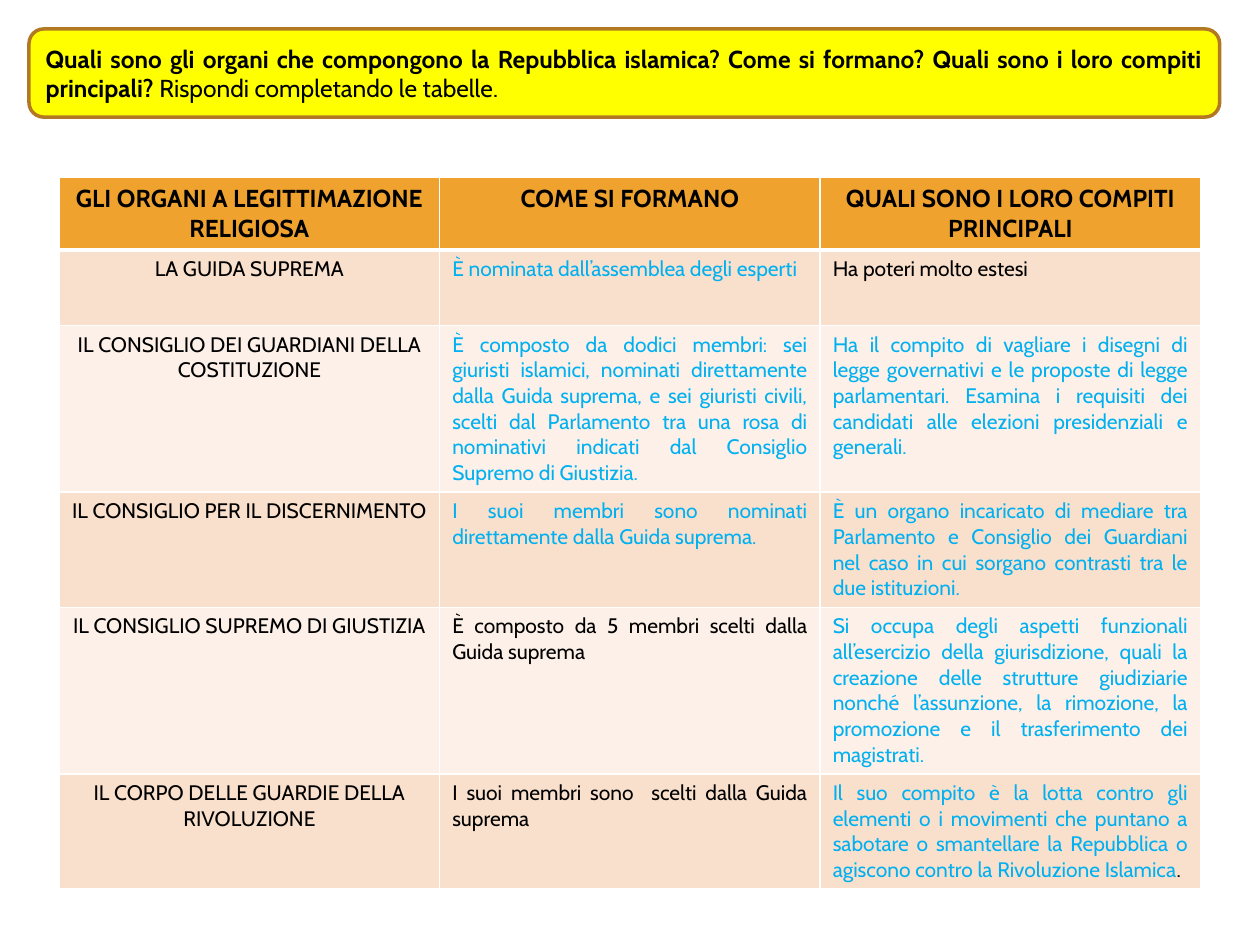
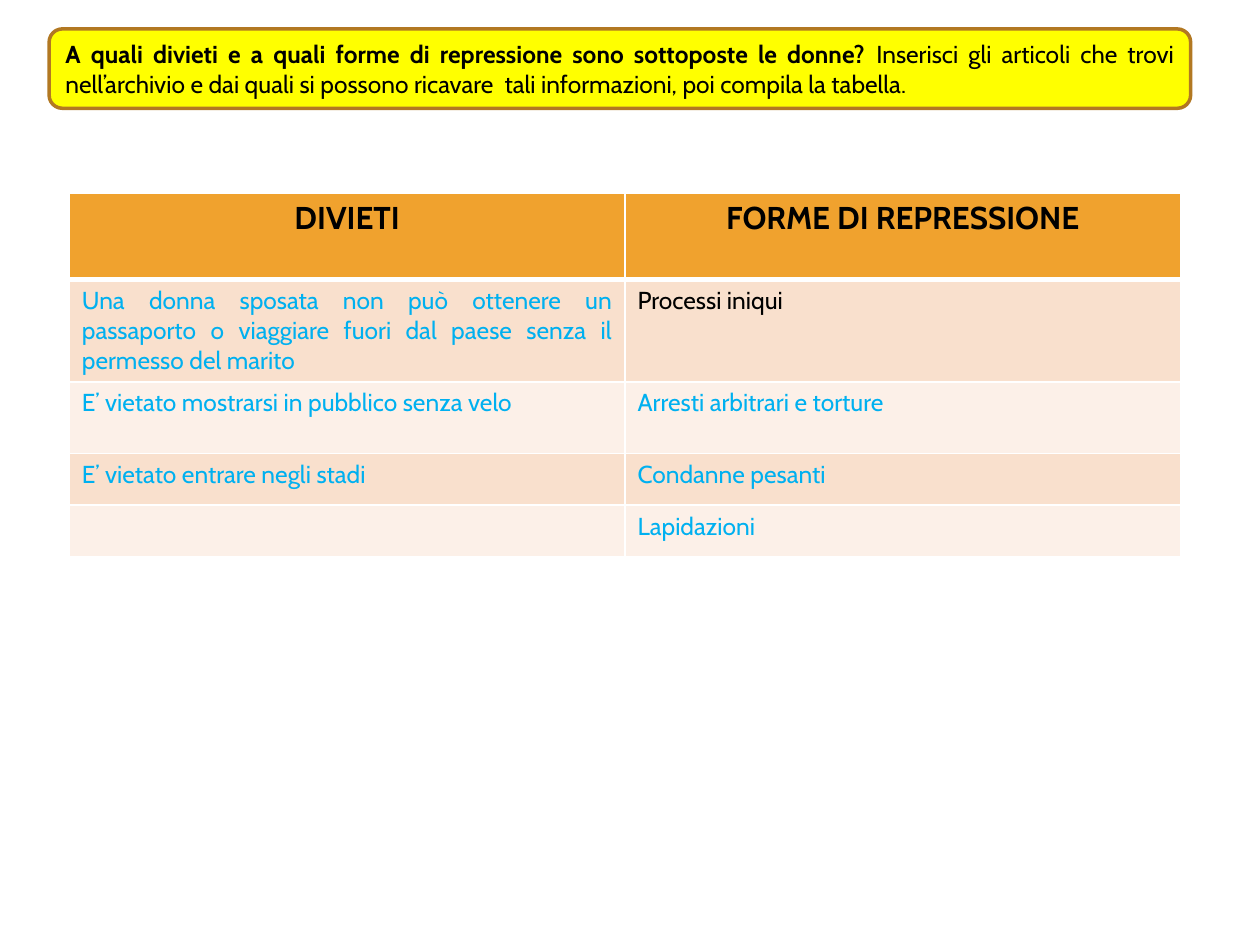
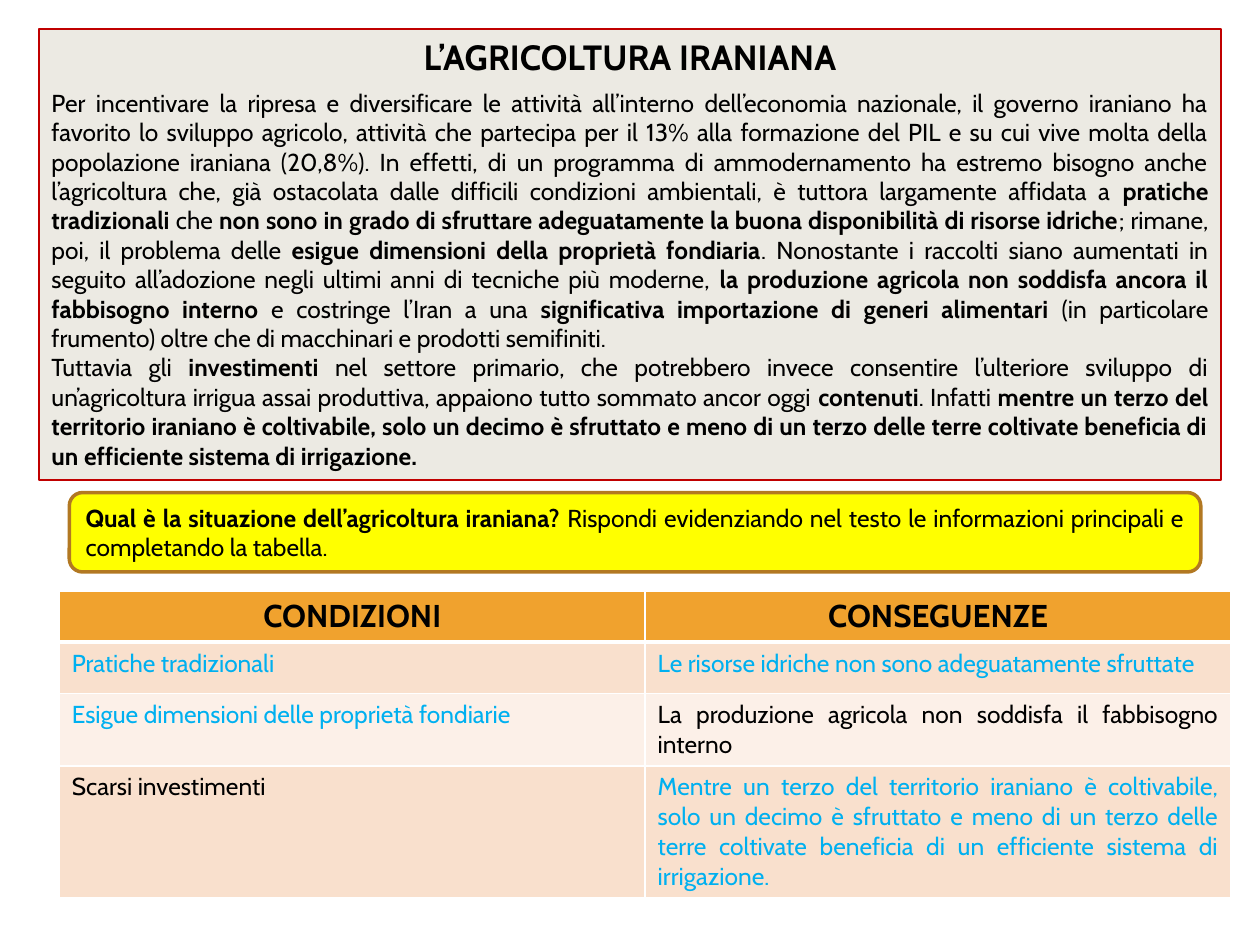
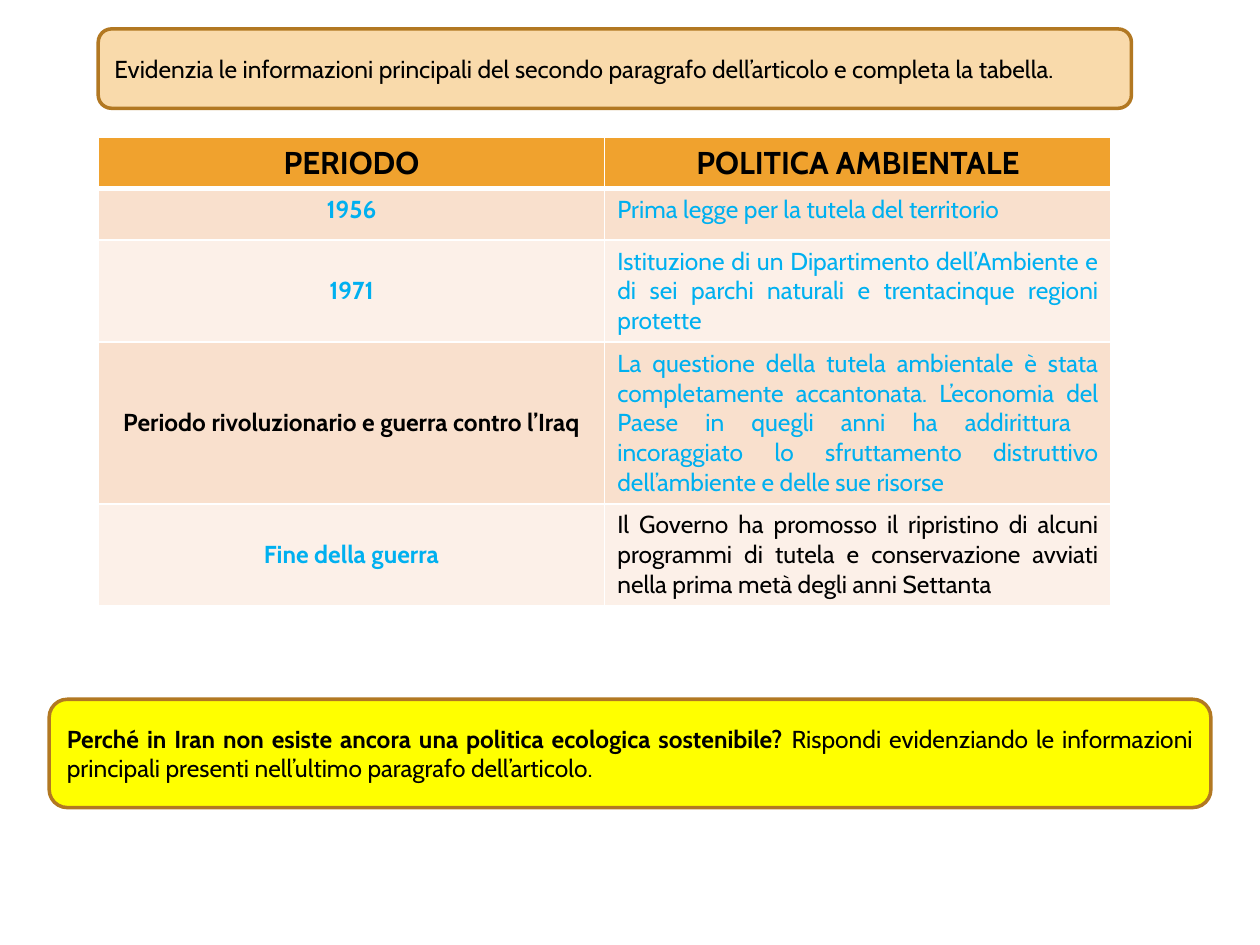
"""Build four worksheet slides on Iran: institutions, women's rights, agriculture and environment."""
from lxml.etree import SubElement
from pptx import Presentation
from pptx.dml.color import RGBColor
from pptx.enum.shapes import MSO_SHAPE as Shape
from pptx.enum.text import MSO_ANCHOR as Anchor, PP_ALIGN as Align
from pptx.oxml.ns import qn
from pptx.util import Inches, Pt

FONT = "Cabin"
COLOURS = {
    "text": "000000", "answer": "00B0F0", "border": "FFFFFF",
    "header": "F0A22E", "odd": "F9E0CD", "even": "FCF0E8",
    "question": "FFFF00", "instruction": "F9DAAB", "outline": "B27822",
    "reading": "ECEAE3", "reading_outline": "C00000",
}


def write(paragraph, text, size, align=Align.JUSTIFY, colour="text", bold=False):
    """Write text where *stars* switch bold and whatever follows a bar is black."""
    paragraph.alignment = align
    for part, passage in enumerate(text.split("|")):
        for index, words in enumerate(passage.split("*")):
            if words:
                run = paragraph.add_run()
                run.text = words
                look = {"name": FONT, "size": Pt(size), "bold": bold or index % 2 == 1}
                for attribute, value in look.items():
                    setattr(run.font, attribute, value)
                run.font.color.rgb = RGBColor.from_string(COLOURS["text" if part else colour])


def add_panel(slide, kind, place, fill, outline, width):
    """Add a filled, outlined panel and return its text frame."""
    panel = slide.shapes.add_shape(kind, *map(Inches, place))
    panel.shadow.inherit = False
    panel.fill.solid()
    panel.fill.fore_color.rgb = RGBColor.from_string(COLOURS[fill])
    panel.line.color.rgb = RGBColor.from_string(COLOURS[outline])
    panel.line.width = Pt(width)
    panel.text_frame.word_wrap = True
    return panel.text_frame


prompts = [
    (0, (0.23, 0.23, 9.45, 0.7), "question",
     "*Quali sono gli organi che compongono la Repubblica islamica? Come si formano? "
     "Quali sono i loro compiti principali? *Rispondi completando le tabelle."),
    (1, (0.39, 0.23, 9.06, 0.63), "question",
     "*A quali divieti e a quali forme di repressione sono sottoposte le donne? *"
     "Inserisci gli articoli che trovi nell’archivio e dai quali si possono ricavare  tali "
     "informazioni, poi compila la tabella."),
    (2, (0.55, 3.91, 8.98, 0.63), "question",
     "*Qual è la situazione dell’agricoltura iraniana? *Rispondi evidenziando nel testo le "
     "informazioni principali e completando la tabella."),
    (3, (0.78, 0.23, 8.2, 0.63), "instruction",
     "Evidenzia le informazioni principali del secondo paragrafo dell’articolo e completa la tabella."),
    (3, (0.39, 5.55, 9.22, 0.86), "question",
     "*Perché in Iran non esiste ancora una politica ecologica sostenibile? *Rispondi "
     "evidenziando le informazioni principali presenti nell’ultimo paragrafo dell’articolo."),
]

reading_title = "L’AGRICOLTURA IRANIANA"
reading_paragraphs = [
    [
        "Per incentivare la ripresa e diversificare le attività all’interno dell’economia nazionale, "
        "il governo iraniano ha favorito lo sviluppo agricolo, attività che partecipa per il 13% alla "
        "formazione del PIL e su cui vive molta della popolazione iraniana (20,8%). ",
        "In effetti, di un programma di ammodernamento ha estremo bisogno anche l’agricoltura che, "
        "già ostacolata dalle difficili condizioni ambientali, è tuttora largamente affidata a "
        "*pratiche tradizionali *che *non sono in grado di sfruttare adeguatamente la buona "
        "disponibilità di risorse idriche*; rimane, poi, il problema delle *esigue dimensioni della "
        "proprietà fondiaria*. ",
        "Nonostante i raccolti siano aumentati in seguito all’adozione negli ultimi anni di tecniche "
        "più moderne, *la produzione agricola non soddisfa ancora il fabbisogno interno *e costringe "
        "l’Iran a una *significativa importazione di generi alimentari *(in particolare frumento) "
        "oltre che di macchinari e prodotti semifiniti.",
    ],
    [
        "Tuttavia gli *investimenti* nel settore primario, che potrebbero invece consentire "
        "l’ulteriore sviluppo di un’agricoltura irrigua assai produttiva, appaiono tutto sommato "
        "ancor oggi *contenuti*. ",
        "Infatti *mentre un terzo del territorio iraniano è coltivabile, solo un decimo è sfruttato "
        "e meno di un terzo delle terre coltivate beneficia di un efficiente sistema "
        "di irrigazione.*",
    ],
]

worksheets = [
    {
        "place": (0.47, 1.41, 9.06), "heights": (0.56, 0.6, 1.3, 0.9, 1.31, 0.9),
        "sizes": (14, 12), "centred_first": True, "bold_first": False,
        "given": {(1, 0), (2, 0), (3, 0), (4, 0), (5, 0), (1, 2), (4, 1), (5, 1)},
        "rows": [
            ("GLI ORGANI A LEGITTIMAZIONE RELIGIOSA", "COME SI FORMANO",
             "QUALI SONO I LORO COMPITI PRINCIPALI"),
            ("LA GUIDA SUPREMA", "È nominata dall’assemblea degli esperti", "Ha poteri molto estesi"),
            ("IL CONSIGLIO DEI GUARDIANI DELLA COSTITUZIONE",
             "È composto da dodici membri: sei giuristi islamici, nominati direttamente dalla Guida "
             "suprema, e sei giuristi civili, scelti dal Parlamento tra una rosa di nominativi "
             "indicati dal Consiglio Supremo di Giustizia.",
             "Ha il compito di vagliare i disegni di legge governativi e le proposte di legge "
             "parlamentari. Esamina i requisiti dei candidati alle elezioni presidenziali e generali."),
            ("IL CONSIGLIO PER IL DISCERNIMENTO",
             "I suoi membri sono nominati direttamente dalla Guida suprema.",
             "È un organo incaricato di mediare tra Parlamento e Consiglio dei Guardiani nel caso "
             "in cui sorgano contrasti tra le due istituzioni."),
            ("IL CONSIGLIO SUPREMO DI GIUSTIZIA",
             "È composto da 5 membri scelti dalla Guida suprema",
             "Si occupa degli aspetti funzionali all’esercizio della giurisdizione, quali la "
             "creazione delle strutture giudiziarie nonché l’assunzione, la rimozione, la "
             "promozione e il trasferimento dei magistrati."),
            ("IL CORPO DELLE GUARDIE DELLA RIVOLUZIONE",
             "I suoi membri sono  scelti dalla Guida suprema",
             "Il suo compito è la lotta contro gli elementi o i movimenti che puntano a sabotare o "
             "smantellare la Repubblica o agiscono contro la Rivoluzione Islamica|."),
        ],
    },
    {
        "place": (0.55, 1.53, 8.82), "heights": (0.69, 0.8, 0.57, 0.41, 0.41),
        "sizes": (18, 14), "centred_first": False, "bold_first": False,
        "given": {(1, 1)},
        "rows": [
            ("DIVIETI", "FORME DI REPRESSIONE"),
            ("Una donna sposata non può ottenere un passaporto o viaggiare fuori dal paese senza il "
             "permesso del marito", "Processi iniqui"),
            ("E’ vietato mostrarsi in pubblico senza velo", "Arresti arbitrari e torture"),
            ("E’ vietato entrare negli stadi", "Condanne pesanti"),
            ("", "Lapidazioni"),
        ],
    },
    {
        "place": (0.47, 4.69, 9.3), "heights": (0.4, 0.41, 0.57, 1.03),
        "sizes": (18, 14), "centred_first": False, "bold_first": False,
        "given": {(2, 1), (3, 0)},
        "rows": [
            ("CONDIZIONI", "CONSEGUENZE"),
            ("Pratiche tradizionali", "Le risorse idriche non sono adeguatamente sfruttate"),
            ("Esigue dimensioni delle proprietà fondiarie",
             "La produzione agricola non soddisfa il fabbisogno interno"),
            ("Scarsi investimenti",
             "Mentre un terzo del territorio iraniano è coltivabile, solo un decimo è sfruttato e "
             "meno di un terzo delle terre coltivate beneficia di un efficiente sistema "
             "di irrigazione."),
        ],
    },
    {
        "place": (0.78, 1.09, 8.04), "heights": (0.4, 0.41, 0.8, 1.27, 0.8),
        "sizes": (18, 14), "centred_first": True, "bold_first": True,
        "given": {(3, 0), (4, 1)},
        "rows": [
            ("PERIODO", "POLITICA AMBIENTALE"),
            ("1956", "Prima legge per la tutela del territorio"),
            ("1971",
             "Istituzione di un Dipartimento dell’Ambiente e di sei parchi naturali e trentacinque "
             "regioni protette"),
            ("Periodo rivoluzionario e guerra contro l’Iraq",
             "La questione della tutela ambientale è stata completamente accantonata. L’economia "
             "del Paese in quegli anni ha addirittura  incoraggiato lo sfruttamento distruttivo "
             "dell’ambiente e delle sue risorse"),
            ("Fine della guerra",
             "Il Governo ha promosso il ripristino di alcuni programmi di tutela e "
             "conservazione avviati nella prima metà degli anni Settanta"),
        ],
    },
]

deck = Presentation()
deck.slide_width, deck.slide_height = Inches(10), Inches(7.5)
slides = [deck.slides.add_slide(deck.slide_layouts[6]) for _ in worksheets]

reading = add_panel(slides[2], Shape.RECTANGLE, (0.31, 0.23, 9.38, 3.58),
                    "reading", "reading_outline", 1.5)
reading.vertical_anchor = Anchor.TOP
write(reading.paragraphs[0], reading_title, 20, Align.CENTER, bold=True)
reading.paragraphs[0].space_after = Pt(6)
for sentences in reading_paragraphs:
    passage = reading.add_paragraph()
    for sentence in sentences:
        write(passage, sentence, 14)

for number, place, fill, wording in prompts:
    prompt = add_panel(slides[number], Shape.ROUNDED_RECTANGLE, place, fill, "outline", 2)
    prompt.vertical_anchor = Anchor.MIDDLE
    write(prompt.paragraphs[0], wording, 14)

for slide, sheet in zip(slides, worksheets):
    left, top, width = sheet["place"]
    rows, heights = sheet["rows"], sheet["heights"]
    header_size, body_size = sheet["sizes"]
    grid = slide.shapes.add_table(len(rows), len(rows[0]), Inches(left), Inches(top),
                                  Inches(width), Inches(sum(heights))).table
    for grid_row, height in zip(grid.rows, heights):
        grid_row.height = Inches(height)
    for row, entries in enumerate(rows):
        for column, entry in enumerate(entries):
            cell = grid.cell(row, column)
            header = row == 0
            first = column == 0
            borders = {"a:lnL": 1, "a:lnR": 1, "a:lnT": 3 if row == 1 else 1, "a:lnB": 3 if header else 1}
            for side, points in borders.items():
                border = SubElement(cell._tc.get_or_add_tcPr(), qn(side), w=str(Pt(points)))
                SubElement(SubElement(border, qn("a:solidFill")), qn("a:srgbClr"), val=COLOURS["border"])
            band = "header" if header else "odd" if row % 2 else "even"
            cell.fill.solid()
            cell.fill.fore_color.rgb = RGBColor.from_string(COLOURS[band])
            centred = header or (first and sheet["centred_first"])
            if first and sheet["bold_first"] and row > 1:
                cell.vertical_anchor = Anchor.MIDDLE
            write(cell.text_frame.paragraphs[0], entry,
                  header_size if header else body_size,
                  Align.CENTER if centred else Align.JUSTIFY,
                  "text" if header or (row, column) in sheet["given"] else "answer",
                  header or (first and sheet["bold_first"]))

deck.save("out.pptx")
